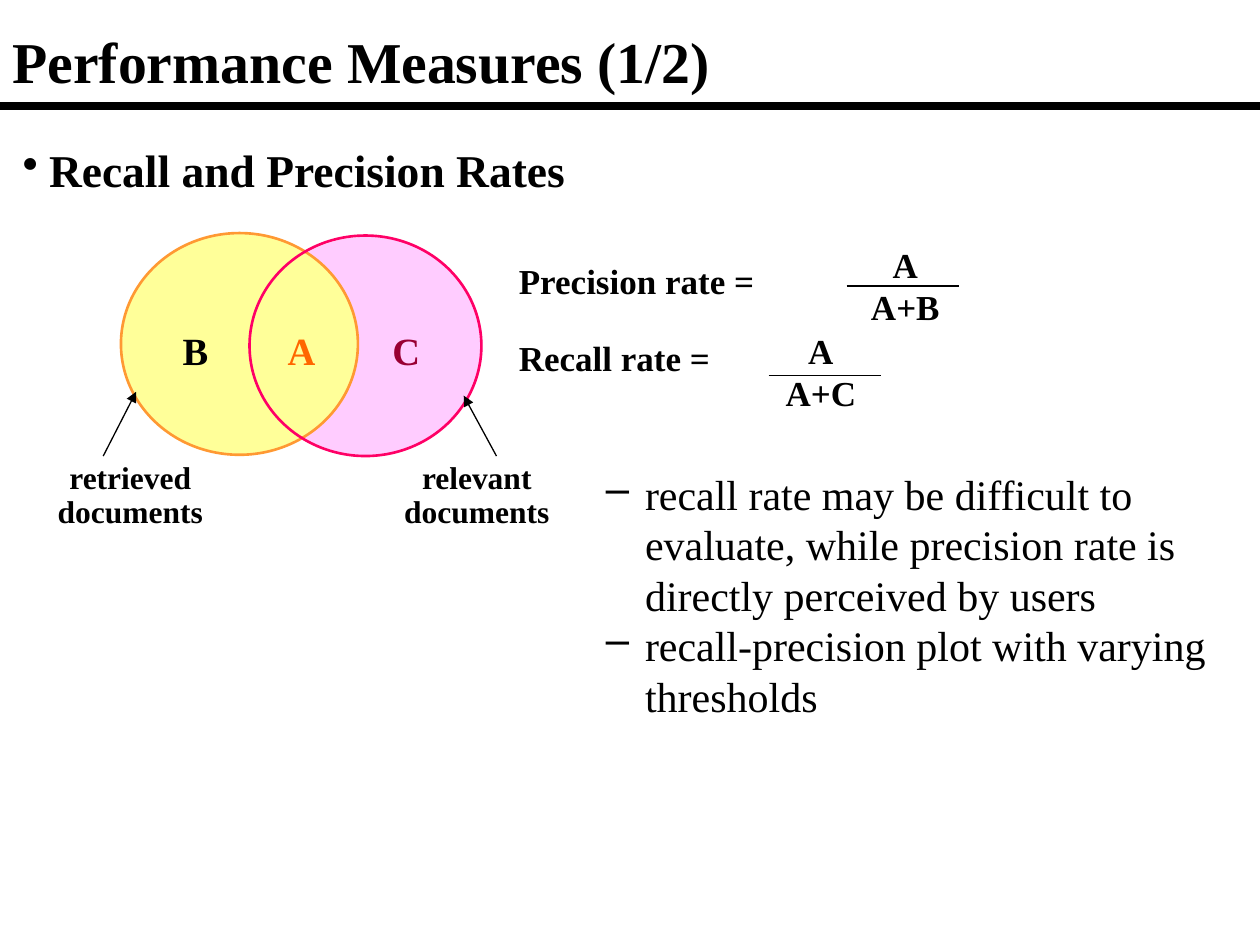
import pptx
import pptx.dml.color
import pptx.enum.shapes
import pptx.enum.text
import pptx.oxml
import pptx.oxml.ns
import pptx.util

Pt = pptx.util.Pt
ALIGN = pptx.enum.text.PP_ALIGN
ANCHOR = pptx.enum.text.MSO_ANCHOR
FONT = "Times New Roman"
BLACK = "000000"

TITLE = "Performance Measures (1/2)"
HEADING = "Recall and Precision Rates"
REMARKS = [
    "recall rate may be difficult to evaluate, while precision rate is directly perceived by users",
    "recall-precision plot with varying thresholds",
]
RATES = ["Precision rate =", "Recall rate ="]
# text, left, top, height, line left, line y
FRACTIONS = [
    ("A\vA+B", 481.7, 135.4, 55.4, 483.8, 163.4),
    ("A\vA+C", 433.4, 185, 67, 439.2, 214.6),
]
# left, top, width, height, fill, line
ELLIPSES = [
    (143.3, 135.4, 132.5, 124.6, "FFCCFF", None),
    (69.1, 133.2, 135.4, 126.7, "FFFF99", "FF9933"),
    (142.6, 134.6, 132.5, 126, None, "FF0066"),
]
REGIONS = [("B\t", BLACK), ("A\t", "FF6600"), ("C", "990033")]
REGION_STEP = 60
# text, left, arrow start, arrow end
CAPTIONS = [
    ("retrieved documents", 25.2, (59, 260.6), (77.8, 223.9)),
    ("relevant documents", 223.2, (283.7, 260.6), (265, 226.1)),
]


def color(hex_string):
    return pptx.dml.color.RGBColor.from_string(hex_string)


def drawing_xml(tag, content=""):
    namespace = pptx.oxml.ns.nsdecls("a")
    return pptx.oxml.parse_xml(f"<a:{tag} {namespace}>{content}</a:{tag}>")


def add_text(slide, box, lines, size, bold=True, align=ALIGN.LEFT,
             anchor=ANCHOR.TOP, space_before=0, line_spacing=None):
    """Add a text box with one paragraph per line; the space skips the first."""
    shape = slide.shapes.add_textbox(*map(Pt, box))
    frame = shape.text_frame
    frame.word_wrap = True
    frame.vertical_anchor = anchor
    frame.text = "\n".join(lines)
    for index, paragraph in enumerate(frame.paragraphs):
        paragraph.alignment = align
        paragraph.space_before = Pt(space_before if index else 0)
        if line_spacing:
            paragraph.line_spacing = line_spacing
        for run in paragraph.runs:
            run.font.name = FONT
            run.font.size = Pt(size)
            run.font.bold = bold
            run.font.color.rgb = color(BLACK)
    return frame


def add_bullets(frame, character, margin, indent):
    for paragraph in frame.paragraphs:
        properties = paragraph._p.get_or_add_pPr()
        properties.set("marL", str(Pt(margin)))
        properties.set("indent", str(Pt(-indent)))
        bullet = drawing_xml("buChar")
        bullet.set("char", character)
        properties.append(bullet)


def add_line(slide, start, end, width=0.75, arrow=False):
    line = slide.shapes.add_connector(
        pptx.enum.shapes.MSO_CONNECTOR.STRAIGHT, *map(Pt, start + end))
    line.line.color.rgb = color(BLACK)
    line.line.width = Pt(width)
    if arrow:
        tail = drawing_xml("tailEnd")
        tail.set("type", "triangle")
        line.line._get_or_add_ln().append(tail)
    line._element.spPr.append(drawing_xml("effectLst"))


def add_ellipse(slide, box, fill, outline):
    shape = slide.shapes.add_shape(
        pptx.enum.shapes.MSO_SHAPE.OVAL, *map(Pt, box))
    shape.shadow.inherit = False
    if fill:
        shape.fill.solid()
        shape.fill.fore_color.rgb = color(fill)
    else:
        shape.fill.background()
    if outline:
        shape.line.color.rgb = color(outline)
        shape.line.width = Pt(1.5)
    else:
        shape.line.fill.background()


def add_region_letters(slide):
    frame = add_text(slide, (97.2, 183.6, 150.5, 33.8), [""], 22)
    paragraph = frame.paragraphs[0]
    for text, hex_string in REGIONS:
        run = paragraph.add_run()
        run.text = text
        run.font.name = FONT
        run.font.size = Pt(22)
        run.font.bold = True
        run.font.color.rgb = color(hex_string)
    stops = "".join(f'<a:tab pos="{Pt(REGION_STEP * number)}" algn="l"/>'
                    for number in range(1, len(REGIONS)))
    paragraph._p.get_or_add_pPr().append(drawing_xml("tabLst", stops))


def main():
    presentation = pptx.Presentation()
    presentation.slide_width, presentation.slide_height = Pt(720), Pt(540)
    slide = presentation.slides.add_slide(presentation.slide_layouts[6])

    add_text(slide, (0, 5.8, 719.3, 56.9), [TITLE], 33, anchor=ANCHOR.MIDDLE)
    add_line(slide, (0, 60.5), (720, 60.5), width=4.5)
    heading = add_text(slide, (5.8, 77.8, 714.2, 389.5), [HEADING], 26)
    add_bullets(heading, "•", 15.1, 15.1)

    for *box, fill, outline in ELLIPSES:
        add_ellipse(slide, box, fill, outline)
    add_region_letters(slide)
    for text, left, start, end in CAPTIONS:
        add_line(slide, start, end, arrow=True)
        add_text(slide, (left, 260.6, 98.6, 46.1), [text], 18,
                 align=ALIGN.CENTER, line_spacing=0.9)

    add_text(slide, (289.4, 144.7, 231.1, 125.3), RATES, 20, space_before=20)
    for text, left, top, height, line_left, line_y in FRACTIONS:
        add_text(slide, (left, top, 71.3, height), [text], 20,
                 align=ALIGN.CENTER)
        add_line(slide, (line_left, line_y), (line_left + 64, line_y))

    remarks = add_text(slide, (308.9, 264.2, 401.8, 169.9), REMARKS, 24,
                       bold=False)
    add_bullets(remarks, "–", 52.6, 22.3)
    presentation.save("out.pptx")


if __name__ == "__main__":
    main()
